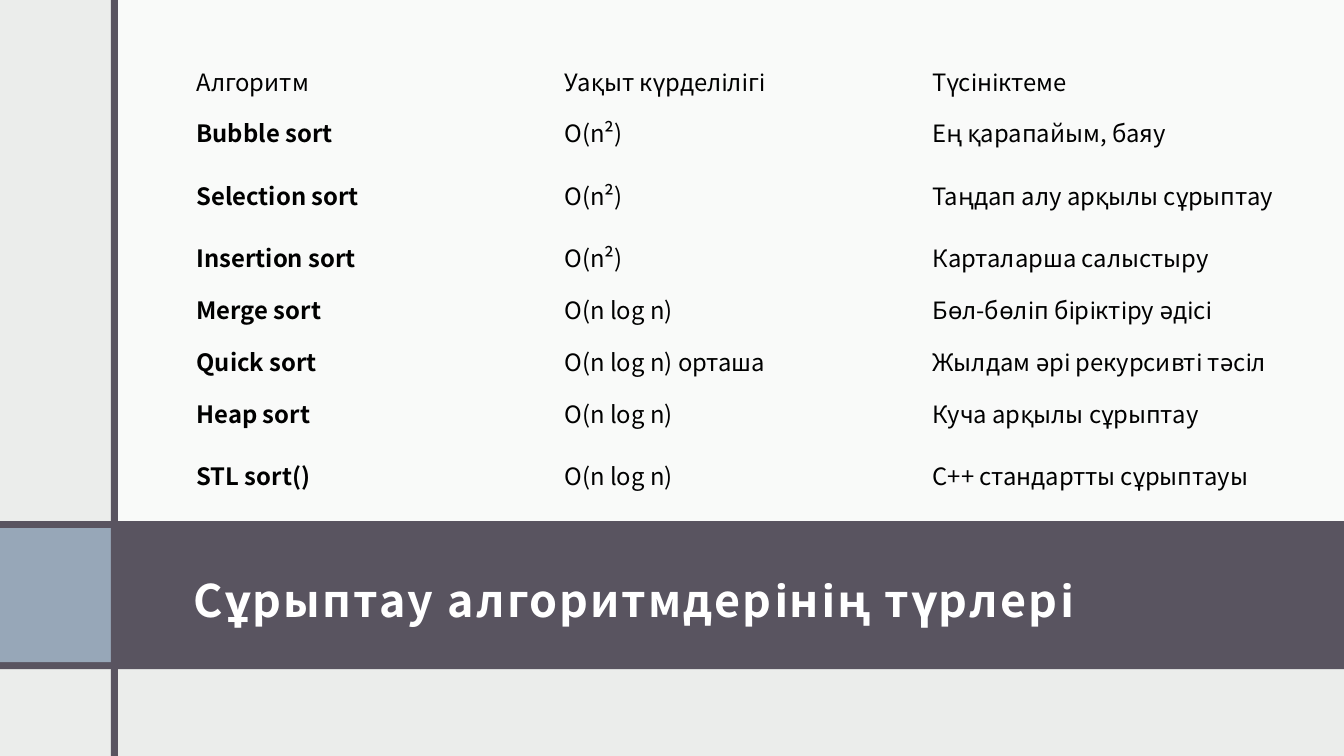
from lxml import etree
from pptx import Presentation
from pptx import util as u
from pptx.dml import color
from pptx.enum import shapes, text
from pptx.oxml import ns

FONT = "Noto Sans CJK JP"
HUES = {"page": "EBEDEB", "panel": "FFFFFF", "band": "595460",
        "tile": "97A7B8", "title": "FFFFFF", "body": "000000"}
PLAIN = "{2D5ABB26-0587-4C30-8999-92F81FD0307C}"
HEIGHTS = [0.51, 0.51, 0.73, 0.51, 0.51, 0.52, 0.51, 0.73]
ROWS = [
    ("Алгоритм", "Уақыт күрделілігі", "Түсініктеме"),
    ("Bubble sort", "O(n²)", "Ең қарапайым, баяу"),
    ("Selection sort", "O(n²)", "Таңдап алу арқылы сұрыптау"),
    ("Insertion sort", "O(n²)", "Карталарша салыстыру"),
    ("Merge sort", "O(n log n)", "Бөл-бөліп біріктіру әдісі"),
    ("Quick sort", "O(n log n) орташа", "Жылдам әрі рекурсивті тәсіл"),
    ("Heap sort", "O(n log n)", "Куча арқылы сұрыптау"),
    ("STL sort()", "O(n log n)", "C++ стандартты сұрыптауы"),
]


def hue(name):
    """Return the named colour."""
    return color.RGBColor.from_string(HUES[name])


def style(para, size, name, bold):
    """Set the font of a paragraph."""
    font = para.font
    font.name, font.size, font.bold = FONT, u.Pt(size), bold
    font.color.rgb = hue(name)


def block(slide, box, name, alpha=None):
    """Draw a plain rectangle, with alpha as a percentage."""
    rect = slide.shapes.add_shape(shapes.MSO_SHAPE.RECTANGLE, *map(u.Inches, box))
    rect.shadow.inherit = False
    rect.fill.solid()
    rect.fill.fore_color.rgb = hue(name)
    rect.line.fill.background()
    if alpha:
        tint = rect.fill._xPr.find(".//" + ns.qn("a:srgbClr"))
        etree.SubElement(tint, ns.qn("a:alpha"), val=str(alpha * 1000))


def frame(slide, box):
    """Draw the panel, band, tile and upright bar over the whole box."""
    left, top, wide, high = box
    edge, gap, band, depth = 1.1, 0.07, top + 5.17, 1.47
    block(slide, (left + 1.14, top, wide - 1.14, band - top), "panel", 75)
    block(slide, (left, band, wide, depth), "band")
    block(slide, (left, band + gap, edge, depth - 2 * gap), "tile")
    block(slide, (left + edge, top, gap, high), "band")


def title(slide, box, words):
    """Write the slide title in its box."""
    body = slide.shapes.add_textbox(*map(u.Inches, box)).text_frame
    body.word_wrap = True
    body.vertical_anchor = text.MSO_ANCHOR.MIDDLE
    body.margin_left, body.margin_right = u.Inches(0.24), u.Inches(0.12)
    body.margin_top, body.margin_bottom = u.Inches(0.2), u.Inches(0.1)
    para = body.paragraphs[0]
    run = para.add_run()
    run.text = words
    run._r.get_or_add_rPr().set("spc", "150")
    style(para, 32, "title", True)


def grid(slide, box, rows, heights):
    """Lay out the table of algorithms in equal columns."""
    holder = slide.shapes.add_table(len(rows), len(rows[0]), *map(u.Inches, box))
    table = holder.table
    table.first_row = table.horz_banding = False
    table._tbl.tblPr.find(ns.qn("a:tableStyleId")).text = PLAIN
    for column in table.columns:
        column.width = u.Inches(box[2] / len(rows[0]))
    for r, (row, height) in enumerate(zip(rows, heights)):
        table.rows[r].height = u.Inches(height)
        for c, words in enumerate(row):
            cell = table.cell(r, c)
            cell.text = words
            cell.fill.background()
            cell.vertical_anchor = text.MSO_ANCHOR.MIDDLE
            cell.margin_left = cell.margin_right = u.Inches(0.09)
            style(cell.text_frame.paragraphs[0], 17, "body", r > 0 and c == 0)


def main():
    """Build and save the slide."""
    deck = Presentation()
    deck.slide_width, deck.slide_height = u.Inches(13.33), u.Inches(7.5)
    slide = deck.slides.add_slide(deck.slide_layouts[6])
    slide.background.fill.solid()
    slide.background.fill.fore_color.rgb = hue("page")
    frame(slide, (0, 0, 13.33, 7.5))
    title(slide, (1.68, 5.33, 10.95, 1.13), "Сұрыптау алгоритмдерінің түрлері")
    grid(slide, (1.86, 0.55, 10.95, sum(HEIGHTS)), ROWS, HEIGHTS)
    deck.save("out.pptx")


if __name__ == "__main__":
    main()
